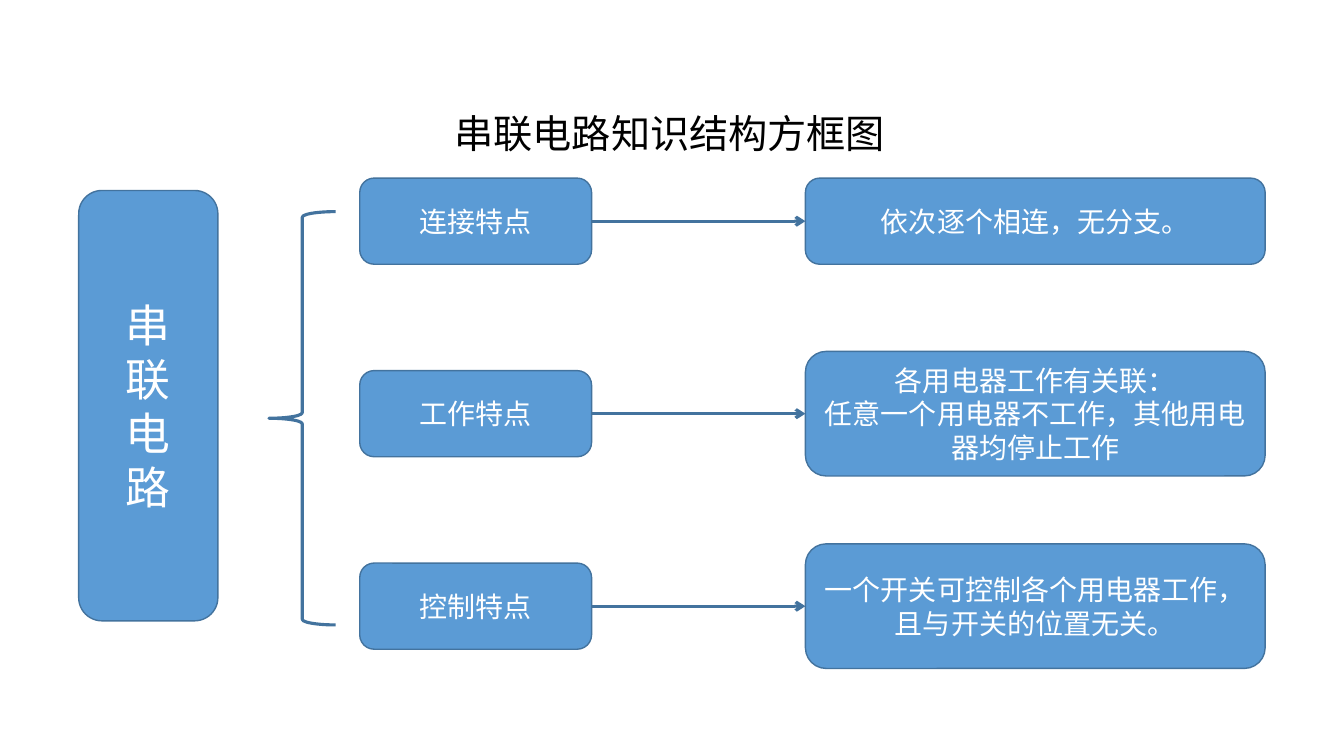
from lxml.etree import SubElement
from pptx import Presentation
from pptx.dml.color import RGBColor
from pptx.enum.shapes import MSO_CONNECTOR, MSO_SHAPE
from pptx.enum.text import MSO_ANCHOR, MSO_AUTO_SIZE, PP_ALIGN
from pptx.oxml.ns import qn
from pptx.util import Pt

COLORS = {"fill": "5B9BD5", "line": "43739E", "light": "FFFFFF", "dark": "000000"}
FONT = "Calibri"
LEFT_SIDE, RIGHT_SIDE = 1, 3

FEATURES = [
    ("连接特点", "依次逐个相连，无分支。", 61.5),
    ("工作特点", "各用电器工作有关联：\n任意一个用电器不工作，其他用电器均停止工作", 89),
    ("控制特点", "一个开关可控制各个用电器工作，且与开关的位置无关。", 89),
]
FIRST_CENTER, ROW_STEP = 158, 137.5
FEATURE_LEFT, FEATURE_WIDTH, FEATURE_HEIGHT = 257, 165.6, 61.5
DETAIL_LEFT, DETAIL_WIDTH = 575.3, 328.4


def rgb(name):
    return RGBColor.from_string(COLORS[name])


class Diagram:
    def __init__(self, slide):
        self.shapes = slide.shapes

    def set_text(self, frame, text, size, color):
        frame.word_wrap = True
        frame.text = text
        for paragraph in frame.paragraphs:
            paragraph.alignment = PP_ALIGN.CENTER
            for run in paragraph.runs:
                run.font.name = FONT
                run.font.size = Pt(size)
                run.font.color.rgb = rgb(color)

    def outline(self, element, width):
        element.line.color.rgb = rgb("line")
        element.line.width = Pt(width)

    def title(self, left, top, width, height, text):
        heading = self.shapes.add_textbox(Pt(left), Pt(top), Pt(width), Pt(height))
        self.set_text(heading.text_frame, text, 28, "dark")
        heading.text_frame.auto_size = MSO_AUTO_SIZE.SHAPE_TO_FIT_TEXT

    def box(self, left, center, width, height, text, size=20):
        """Draw a rounded box centred vertically on the given height."""
        box = self.shapes.add_shape(
            MSO_SHAPE.ROUNDED_RECTANGLE,
            Pt(left), Pt(center - height / 2), Pt(width), Pt(height))
        box.shadow.inherit = False
        box.fill.solid()
        box.fill.fore_color.rgb = rgb("fill")
        self.outline(box, 1)
        box.text_frame.vertical_anchor = MSO_ANCHOR.MIDDLE
        self.set_text(box.text_frame, text, size, "light")
        return box

    def brace(self, left, top, width, height):
        brace = self.shapes.add_shape(
            MSO_SHAPE.LEFT_BRACE, Pt(left), Pt(top), Pt(width), Pt(height))
        brace.shadow.inherit = False
        brace.fill.background()
        self.outline(brace, 2.25)

    def arrow(self, source, target):
        arrow = self.shapes.add_connector(MSO_CONNECTOR.STRAIGHT, 0, 0, 0, 0)
        arrow.begin_connect(source, RIGHT_SIDE)
        arrow.end_connect(target, LEFT_SIDE)
        self.outline(arrow, 2.25)
        properties = arrow.element.spPr
        SubElement(properties.find(qn("a:ln")), qn("a:tailEnd"), type="arrow")
        SubElement(properties, qn("a:effectLst"))


def main():
    presentation = Presentation()
    presentation.slide_width, presentation.slide_height = Pt(960), Pt(540)
    diagram = Diagram(presentation.slides.add_slide(presentation.slide_layouts[6]))

    diagram.box(56.2, 289.8, 99.4, 307.4, "\n".join("串联电路"), 32)
    diagram.title(293, 74.9, 370.8, 41, "串联电路知识结构方框图")
    diagram.brace(192.2, 151.2, 47.5, 295.2)
    for row, (name, description, height) in enumerate(FEATURES):
        center = FIRST_CENTER + row * ROW_STEP
        feature = diagram.box(FEATURE_LEFT, center, FEATURE_WIDTH, FEATURE_HEIGHT, name)
        detail = diagram.box(DETAIL_LEFT, center, DETAIL_WIDTH, height, description)
        diagram.arrow(feature, detail)

    presentation.save("out.pptx")


if __name__ == "__main__":
    main()
